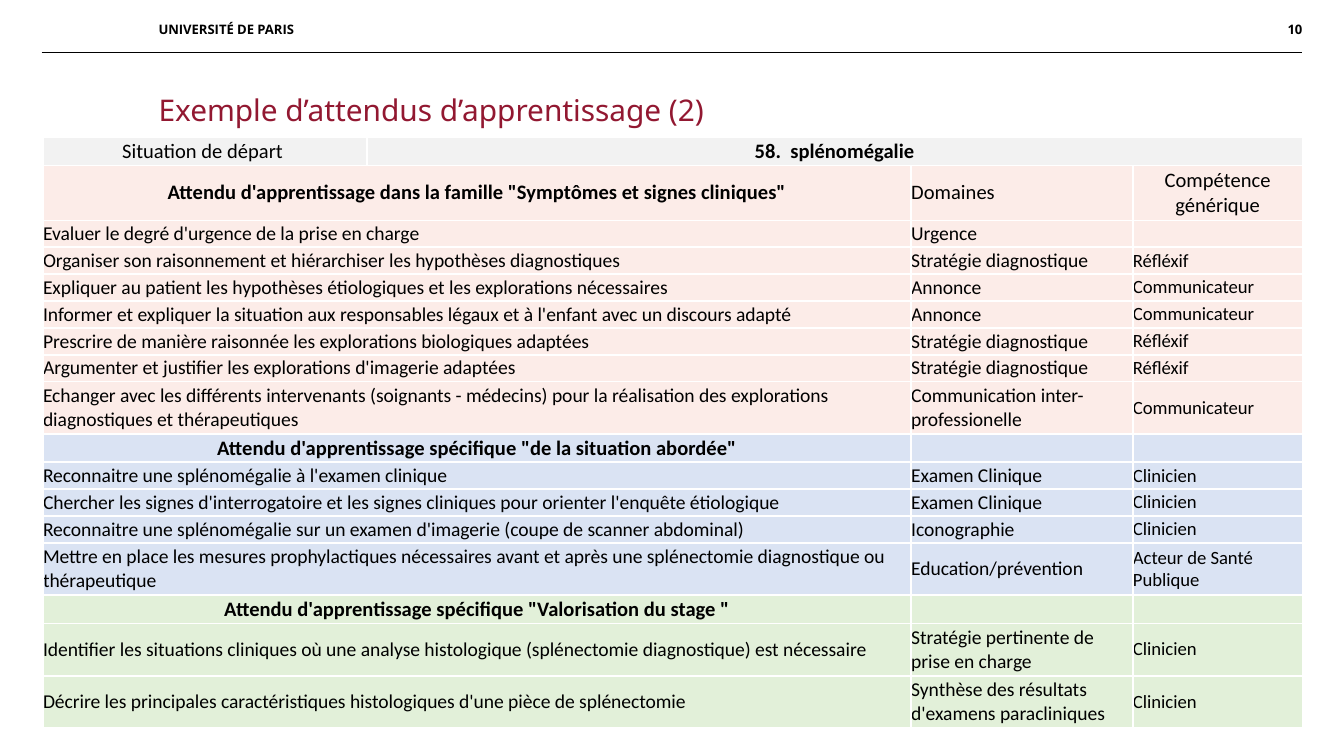
from lxml.etree import SubElement
from pptx import Presentation
from pptx.dml.color import RGBColor
from pptx.enum.text import MSO_ANCHOR, PP_ALIGN
from pptx.oxml import parse_xml
from pptx.oxml.ns import nsdecls, qn
from pptx.util import Inches, Pt

HUES = {"ink": "000000", "title": "921831", "edge": "FFFFFF", "head": "F2F2F2",
        "signs": "FCECE8", "case": "DAE3F3", "stage": "E2F0D9"}
WIDTHS = [2.41, 4.05, 1.65, 1.26]
PLAN = "Stratégie diagnostique"
TALK, THINK, CARE = "Communicateur", "Réfléxif", "Clinicien"

GROUPS = [
    ("signs", 0.41, ("Attendu d'apprentissage dans la famille \"Symptômes et signes cliniques\"",
                     "Domaines", "Compétence générique"), [
        (0.2, "Evaluer le degré d'urgence de la prise en charge", "Urgence", ""),
        (0.2, "Organiser son raisonnement et hiérarchiser les hypothèses diagnostiques",
         PLAN, THINK),
        (0.2, "Expliquer au patient les hypothèses étiologiques et les explorations nécessaires",
         "Annonce", TALK),
        (0.2, "Informer et expliquer la situation aux responsables légaux et à l'enfant "
         "avec un discours adapté", "Annonce", TALK),
        (0.2, "Prescrire de manière raisonnée les explorations biologiques adaptées",
         PLAN, THINK),
        (0.2, "Argumenter et justifier les explorations d'imagerie adaptées", PLAN, THINK),
        (0.39, "Echanger avec les différents intervenants (soignants - médecins) pour la "
         "réalisation des explorations diagnostiques et thérapeutiques",
         "Communication inter-professionelle", TALK),
    ]),
    ("case", 0.21, ("Attendu d'apprentissage spécifique \"de la situation abordée\"", "", ""), [
        (0.2, "Reconnaitre une splénomégalie à l'examen clinique", "Examen Clinique", CARE),
        (0.2, "Chercher les signes d'interrogatoire et les signes cliniques pour orienter "
         "l'enquête étiologique", "Examen Clinique", CARE),
        (0.2, "Reconnaitre une splénomégalie sur un examen d'imagerie "
         "(coupe de scanner abdominal)", "Iconographie", CARE),
        (0.39, "Mettre en place les mesures prophylactiques nécessaires avant et après une "
         "splénectomie diagnostique ou thérapeutique",
         "Education/prévention", "Acteur de Santé Publique"),
    ]),
    ("stage", 0.21, ("Attendu d'apprentissage spécifique \"Valorisation du stage \"", "", ""), [
        (0.39, "Identifier les situations cliniques où une analyse histologique "
         "(splénectomie diagnostique) est nécessaire",
         "Stratégie pertinente de prise en charge", CARE),
        (0.39, "Décrire les principales caractéristiques histologiques d'une pièce de "
         "splénectomie", "Synthèse des résultats d'examens paracliniques", CARE),
    ]),
]


def color(name):
    """Return a palette colour."""
    return RGBColor.from_string(HUES[name])


def style(para, face, size, hue="ink", bold=False, align=PP_ALIGN.LEFT):
    """Format a paragraph and its runs."""
    para.alignment = align
    for run in para.runs:
        font = run.font
        font.name, font.size, font.bold = face, Pt(size), bold
        font.color.rgb = color(hue)


def trim(frame):
    """Remove the insets of a text frame and wrap its text."""
    frame.margin_left = frame.margin_right = frame.margin_top = frame.margin_bottom = 0
    frame.word_wrap = True


def add_title(slide, text):
    """Place the slide title."""
    title = slide.shapes.title
    title.left, title.top = Inches(1.18), Inches(0.71)
    title.width, title.height = Inches(8.51), Inches(0.31)
    frame = title.text_frame
    frame.text = text
    trim(frame)
    frame.vertical_anchor = MSO_ANCHOR.TOP
    para = frame.paragraphs[0]
    para.line_spacing = 0.9
    style(para, "Noto Sans", 16, "title")


def add_label(slide, text, left, width, align):
    """Add a bold label in the page header."""
    box = slide.shapes.add_textbox(Inches(left), Inches(0.1), Inches(width), Inches(0.24))
    frame = box.text_frame
    frame.text = text
    trim(frame)
    frame.vertical_anchor = MSO_ANCHOR.MIDDLE
    style(frame.paragraphs[0], "Open Sans", 7, bold=True, align=align)


def add_rule(slide):
    """Draw the thin line under the page header."""
    rule = slide.shapes.add_connector(1, Inches(0.31), Inches(0.39), Inches(9.69), Inches(0.39))
    rule.line.color.rgb = color("ink")
    rule.line.width = Pt(0.25)
    SubElement(rule._element.spPr, qn("a:effectLst"))


def set_cell(cell, text, hue, size, bold=False, mid=False):
    """Fill one table cell with its text, tint and borders."""
    cell.text = text
    cell.margin_left = cell.margin_right = cell.margin_top = cell.margin_bottom = 0
    cell.vertical_anchor = MSO_ANCHOR.MIDDLE
    para = cell.text_frame.paragraphs[0]
    style(para, "Calibri", size, bold=bold, align=PP_ALIGN.CENTER if mid else PP_ALIGN.LEFT)
    if not text:
        SubElement(para._p, qn("a:endParaRPr"), sz=str(int(size * 100)))
    props = cell._tc.get_or_add_tcPr()
    for side in ("lnL", "lnR", "lnT", "lnB"):
        props.append(parse_xml(
            f'<a:{side} {nsdecls("a")} w="12700"><a:solidFill>'
            f'<a:srgbClr val="{HUES["edge"]}"/></a:solidFill></a:{side}>'))
    cell.fill.solid()
    cell.fill.fore_color.rgb = color(hue)


def set_row(table, row, hue, texts, head=False):
    """Fill a row whose first two columns are merged."""
    goal, field, skill = texts
    sizes = (11, 11, 11) if head else (10.5, 10.5, 10)
    set_cell(table.cell(row, 0), goal, hue, sizes[0], bold=head, mid=head)
    set_cell(table.cell(row, 1), "", hue, sizes[0])
    set_cell(table.cell(row, 2), field, hue, sizes[1])
    set_cell(table.cell(row, 3), skill, hue, sizes[2], mid=head)
    table.cell(row, 0).merge(table.cell(row, 1))


def add_goals(slide):
    """Add the table of learning goals."""
    lines = []
    for hue, high, head, goals in GROUPS:
        lines.append((high, hue, head, True))
        lines += [(tall, hue, texts, False) for tall, *texts in goals]
    highs = [0.21] + [line[0] for line in lines]
    frame = slide.shapes.add_table(len(highs), len(WIDTHS), Inches(0.32), Inches(1.02),
                                   Inches(sum(WIDTHS)), Inches(sum(highs)))
    table = frame.table
    table.first_row = table.horz_banding = False
    for col, width in zip(table.columns, WIDTHS):
        col.width = Inches(width)
    for row, high in zip(table.rows, highs):
        row.height = Inches(high)
    set_cell(table.cell(0, 0), "Situation de départ ", "head", 11, mid=True)
    set_cell(table.cell(0, 1), "58.  splénomégalie", "head", 11, bold=True, mid=True)
    for col in (2, 3):
        set_cell(table.cell(0, col), "", "head", 11)
    table.cell(0, 1).merge(table.cell(0, 3))
    for row, (_, hue, texts, head) in enumerate(lines, 1):
        set_row(table, row, hue, texts, head)


def main():
    """Build the slide and save it."""
    deck = Presentation()
    deck.slide_width = Inches(10)
    deck.slide_height = deck.slide_width * 9 // 16
    slide = deck.slides.add_slide(deck.slide_layouts[5])
    add_rule(slide)
    add_label(slide, "10", 8.31, 1.38, PP_ALIGN.RIGHT)
    add_label(slide, "UNIVERSITÉ DE PARIS", 1.18, 1.89, PP_ALIGN.LEFT)
    add_title(slide, "Exemple d’attendus d’apprentissage (2)")
    add_goals(slide)
    deck.save("out.pptx")


if __name__ == "__main__":
    main()
